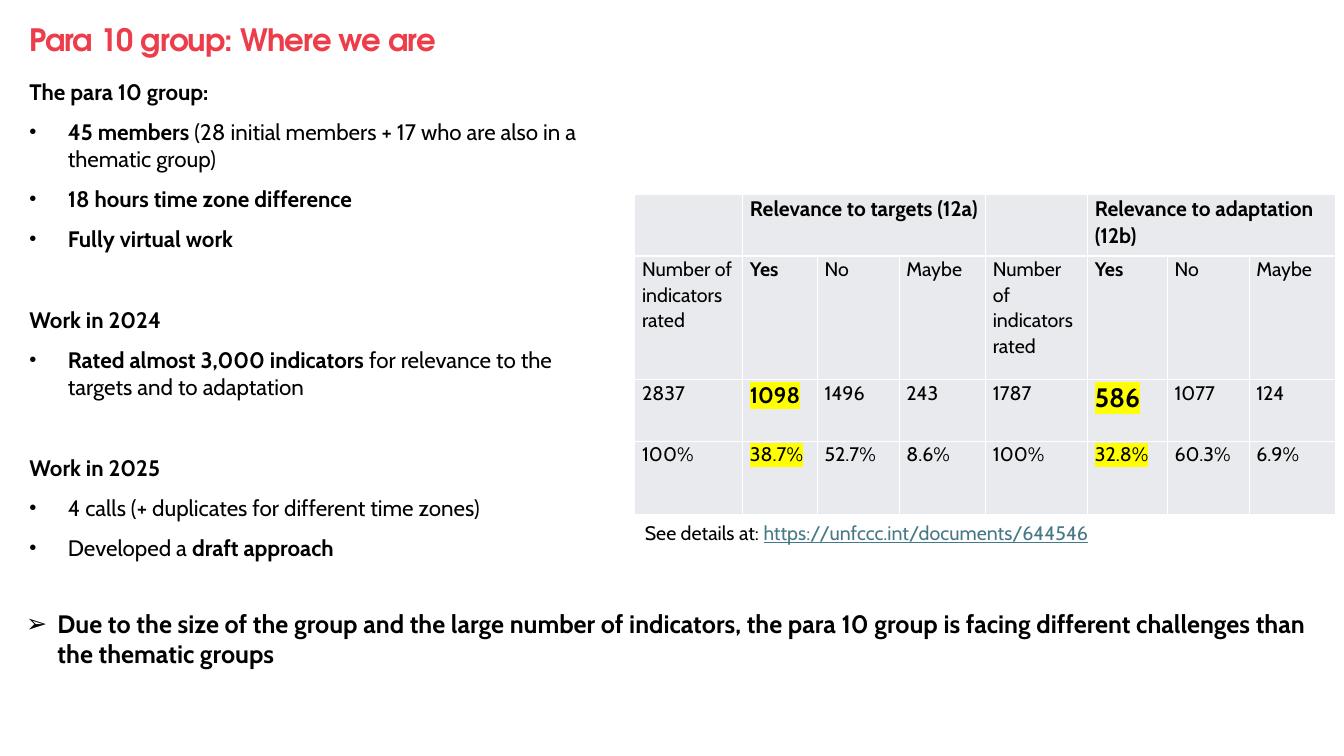
from dataclasses import dataclass
from itertools import accumulate

from lxml import etree
from pptx import Presentation
from pptx.dml.color import RGBColor
from pptx.enum.text import MSO_ANCHOR, MSO_AUTO_SIZE, PP_ALIGN
from pptx.oxml.ns import qn
from pptx.util import Cm, Pt

TOP = MSO_ANCHOR.TOP
FIXED = MSO_AUTO_SIZE.NONE
LEFT = PP_ALIGN.LEFT

BLACK = RGBColor(0x00, 0x00, 0x00)
WHITE = RGBColor(0xFF, 0xFF, 0xFF)
CORAL = RGBColor(0xED, 0x3D, 0x4A)
TEAL = RGBColor(0x46, 0x78, 0x86)
GREY = RGBColor(0xE8, 0xEA, 0xED)
YELLOW = RGBColor(0xFF, 0xFF, 0x00)

CABIN = "Cabin"
GYRE = "TeX Gyre Adventor"


@dataclass(frozen=True)
class Run:
    text: str
    bold: bool = False


@dataclass(frozen=True)
class Item:
    runs: tuple[Run, ...]
    dot: bool = True
    gap: float = 8.5


@dataclass(frozen=True)
class Entry:
    text: str
    size: float = 14
    bold: bool = False
    mark: bool = False
    span: int = 1


ITEMS = (
    Item((Run("The para 10 group:", True),), dot=False),
    Item((Run("45 members ", True),
          Run("(28 initial members + 17 who are also in a thematic group)"))),
    Item((Run("18 hours time zone difference", True),)),
    Item((Run("Fully virtual work", True),)),
    Item((Run("Work in 2024", True),), dot=False, gap=37.5),
    Item((Run("Rated almost 3,000 indicators ", True),
          Run("for relevance to the targets and to adaptation"))),
    Item((Run("Work in 2025", True),), dot=False, gap=37.5),
    Item((Run("4 calls (+ duplicates for different time zones)"),)),
    Item((Run("Developed a "), Run("draft approach", True))),
)

WIDTHS = (2.72, 1.88, 2.06, 2.18, 2.57, 2.01, 2.06, 2.18)
HEIGHTS = (1.55, 3.12, 1.55, 1.85)
LABELS = (Entry("Number of indicators rated"), Entry("Yes", bold=True),
          Entry("No"), Entry("Maybe"))
ROWS = (
    (Entry(""), Entry("Relevance to targets (12a)", 15, True, span=3),
     Entry(""), Entry("Relevance to adaptation (12b)", 15, True, span=3)),
    LABELS * 2,
    (Entry("2837"), Entry("1098", 16, True, True), Entry("1496"), Entry("243"),
     Entry("1787"), Entry("586", 19, True, True), Entry("1077"), Entry("124")),
    (Entry("100%"), Entry("38.7%", mark=True), Entry("52.7%"), Entry("8.6%"),
     Entry("100%"), Entry("32.8%", mark=True), Entry("60.3%"), Entry("6.9%")),
)


def tint_node(root, tag: str, tint: RGBColor):
    node = etree.SubElement(root, qn(tag))
    etree.SubElement(node, qn("a:srgbClr"), val=str(tint))
    return node


def write(par, text: str, *, size: float = 14, bold: bool = False,
          tint: RGBColor = BLACK, face: str = CABIN, mark: bool = False,
          line: bool = False, space: int = 0) -> None:
    run = par.add_run()
    run.text = text
    font = run.font
    font.size, font.bold, font.name = Pt(size), bold, face
    font.color.rgb = tint
    if line:
        font.underline = True
    props = font._element
    if space:
        props.set("spc", str(space))
    if mark:
        glow = tint_node(props, "a:highlight", YELLOW)
        props.find(qn("a:solidFill")).addnext(glow)


def bullet(par, sign: str, depth: float, scale: int = 100) -> None:
    props = par._p.get_or_add_pPr()
    props.set("marL", str(Cm(depth)))
    props.set("indent", str(-Cm(depth)))
    tint_node(props, "a:buClr", BLACK)
    etree.SubElement(props, qn("a:buSzPct"), val=str(scale * 1000))
    etree.SubElement(props, qn("a:buFont"), typeface="Arial")
    etree.SubElement(props, qn("a:buChar"), char=sign)


def plain(par) -> None:
    props = par._p.get_or_add_pPr()
    props.set("marL", "0")
    props.set("indent", "0")
    etree.SubElement(props, qn("a:buNone"))


def place(shape, left: float, top: float, width: float, height: float):
    shape.left, shape.top = Cm(left), Cm(top)
    shape.width, shape.height = Cm(width), Cm(height)
    frame = shape.text_frame
    frame.margin_left = frame.margin_right = 0
    frame.margin_top = frame.margin_bottom = 0
    frame.vertical_anchor, frame.auto_size = TOP, FIXED
    frame.word_wrap = True
    return frame


def add_box(slide, left: float, top: float, width: float, height: float):
    box = slide.shapes.add_textbox(Cm(left), Cm(top), Cm(width), Cm(height))
    box.text_frame.word_wrap = True
    return box.text_frame.paragraphs[0]


def fill_list(frame, items: tuple[Item, ...]) -> None:
    for index, item in enumerate(items):
        par = frame.add_paragraph() if index else frame.paragraphs[0]
        par.alignment = LEFT
        par.space_before, par.space_after = Pt(item.gap), Pt(1)
        if item.dot:
            bullet(par, "•", 0.97, 90)
        else:
            plain(par)
        for run in item.runs:
            write(par, run.text, size=16, bold=run.bold)


def style(cell) -> None:
    props = cell._tc.get_or_add_tcPr()
    for side in ("a:lnL", "a:lnR", "a:lnT", "a:lnB"):
        edge = etree.SubElement(props, qn(side), w=str(Pt(1)))
        tint_node(edge, "a:solidFill", WHITE)
    cell.fill.solid()
    cell.fill.fore_color.rgb = GREY
    cell.margin_left = cell.margin_right = Cm(0.18)
    cell.margin_top = cell.margin_bottom = 0


def add_grid(slide, left: float, top: float) -> None:
    grid = slide.shapes.add_table(
        len(HEIGHTS), len(WIDTHS), Cm(left), Cm(top),
        Cm(sum(WIDTHS)), Cm(sum(HEIGHTS))).table
    grid.first_row = grid.horz_banding = False
    for column, width in zip(grid.columns, WIDTHS):
        column.width = Cm(width)
    for row, height in zip(grid.rows, HEIGHTS):
        row.height = Cm(height)
    for cell in grid.iter_cells():
        style(cell)
    for row, data in enumerate(ROWS):
        starts = accumulate((entry.span for entry in data), initial=0)
        for start, entry in zip(starts, data):
            cell = grid.cell(row, start)
            if entry.span > 1:
                cell.merge(grid.cell(row, start + entry.span - 1))
            if entry.text:
                par = cell.text_frame.paragraphs[0]
                par.line_spacing = 1.07
                par.space_before = par.space_after = Pt(12)
                write(par, entry.text, size=entry.size, bold=entry.bold,
                      mark=entry.mark)


def main() -> None:
    deck = Presentation()
    deck.slide_width, deck.slide_height = Cm(33.87), Cm(19.05)
    slide = deck.slides.add_slide(deck.slide_layouts[1])

    title = place(slide.shapes.title, 0.74, 0.51, 24.31, 1.04).paragraphs[0]
    title.alignment = LEFT
    write(title, "Para 10 group: Where we are", size=22, bold=True,
          tint=CORAL, face=GYRE, space=-60)

    fill_list(place(slide.placeholders[1], 0.74, 1.96, 14.83, 9.47), ITEMS)
    add_grid(slide, 16, 4.9)

    close = add_box(slide, 0.41, 15.21, 32.87, 1.8)
    bullet(close, "➢", 0.79)
    write(close, "Due to the size of the group and the large number of "
          "indicators, the para 10 group is facing different challenges "
          "than the thematic groups", size=18, bold=True)

    note = add_box(slide, 16, 13, 17.65, 0.86)
    write(note, "See details at: ")
    write(note, "https://unfccc.int/documents/644546", tint=TEAL, line=True)

    deck.save("out.pptx")


if __name__ == "__main__":
    main()
